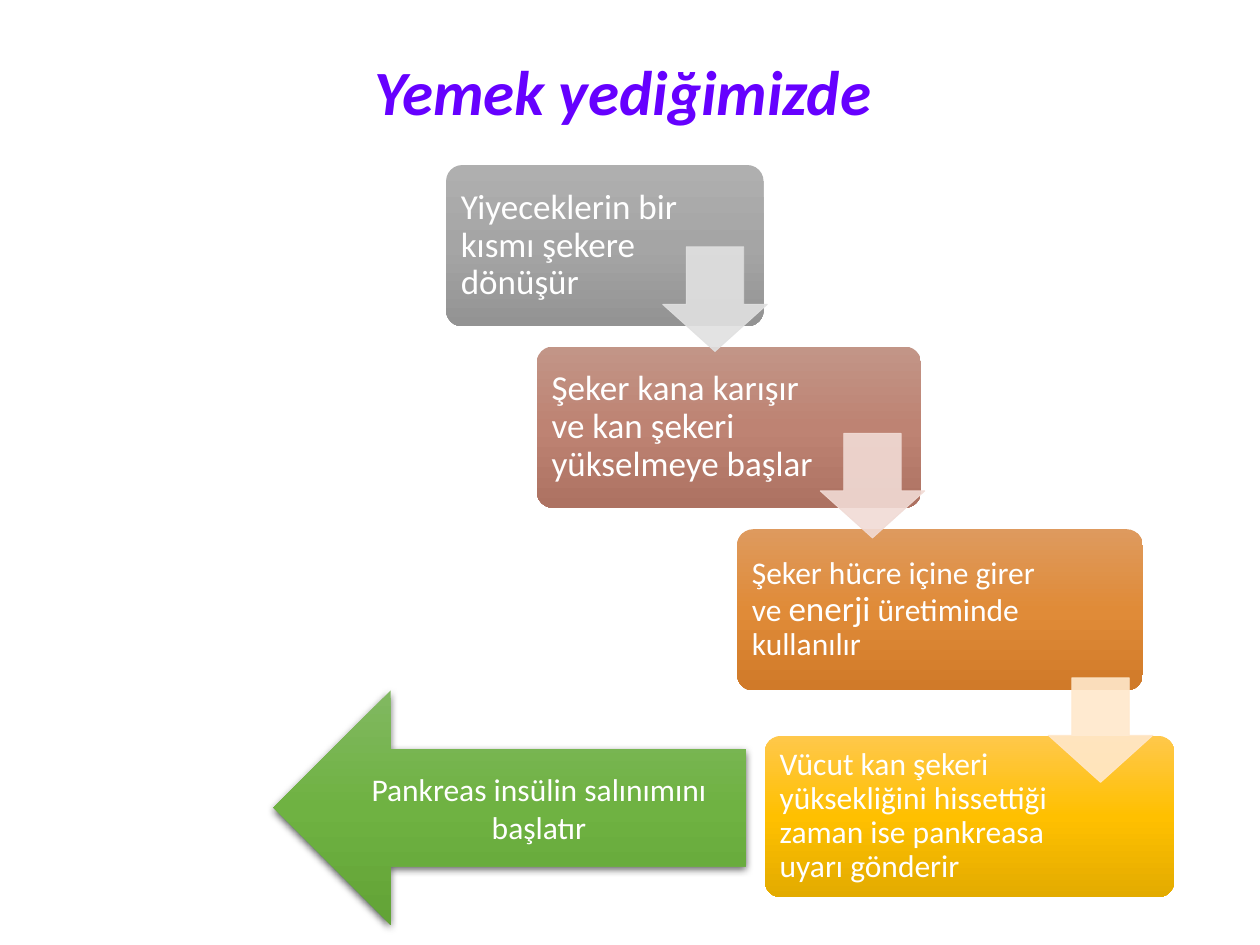
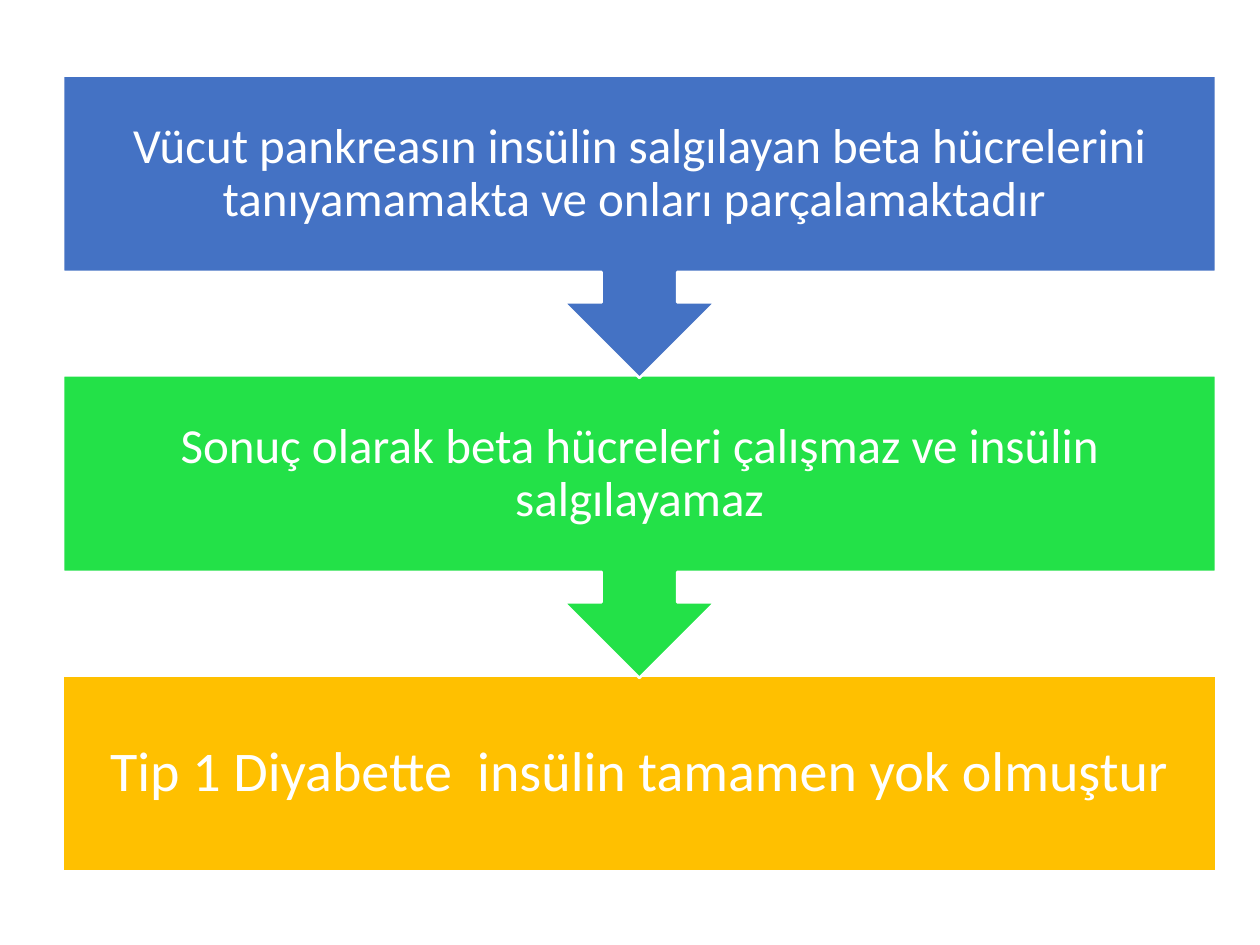
"""Build two slides on what happens to insulin after a meal and in Type 1 diabetes."""
from copy import deepcopy
from dataclasses import dataclass

from lxml.etree import SubElement
from pptx import Presentation
from pptx.dml.color import RGBColor
from pptx.enum.shapes import MSO_SHAPE
from pptx.enum.text import MSO_ANCHOR, PP_ALIGN
from pptx.oxml.ns import qn
from pptx.shapes.autoshape import Shape
from pptx.slide import Slide
from pptx.util import Inches, Pt

FONT = "Calibri"
WHITE = RGBColor(0xFF, 0xFF, 0xFF)
PURPLE = RGBColor(0x66, 0x00, 0xFF)
BLUE = RGBColor(0x44, 0x72, 0xC4)
GREEN = RGBColor(0x23, 0xE1, 0x48)
GOLD = RGBColor(0xFF, 0xC0, 0x00)
PALE_GREY = RGBColor(0xE1, 0xE1, 0xE1)
PALE_BROWN = RGBColor(0xF1, 0xDB, 0xD5)
PALE_ORANGE = RGBColor(0xFF, 0xE8, 0xCB)

Shades = tuple[RGBColor, RGBColor, RGBColor]
GREY_SHADES = (RGBColor(0xAF, 0xAF, 0xAF), RGBColor(0xA5, 0xA5, 0xA5), RGBColor(0x93, 0x93, 0x93))
BROWN_SHADES = (RGBColor(0xC2, 0x95, 0x87), RGBColor(0xBE, 0x83, 0x73), RGBColor(0xAD, 0x72, 0x62))
ORANGE_SHADES = (RGBColor(0xDE, 0x9A, 0x5E), RGBColor(0xE0, 0x8B, 0x38), RGBColor(0xD0, 0x7A, 0x29))
GOLD_SHADES = (RGBColor(0xFF, 0xC8, 0x4B), GOLD, RGBColor(0xE3, 0xAB, 0x00))
GREEN_SHADES = (RGBColor(0x81, 0xB8, 0x61), RGBColor(0x6F, 0xB2, 0x42), RGBColor(0x62, 0xA3, 0x36))

STEP_HEIGHT = 1.28
ARROW_SIZE = 0.83
STAGE_LEFT, STAGE_TOP, STAGE_WIDTH = 0.5, 0.6, 9.15
STAGE_PITCH, CALLOUT_HEIGHT, STAGE_HEIGHT = 2.38, 2.4, 1.56


@dataclass(frozen=True)
class Step:
    """A rounded box of the staircase; each span is a text with its size."""
    left: float
    top: float
    width: float
    right_margin: float
    shades: Shades
    spans: tuple[tuple[str, int], ...]


@dataclass(frozen=True)
class StepArrow:
    """A pale arrow leading from one step to the next."""
    left: float
    top: float
    color: RGBColor


@dataclass(frozen=True)
class Stage:
    """A full-width stage of the vertical process."""
    text: str
    size: int
    margin: float
    color: RGBColor


STEPS = (
    Step(3.54, 1.31, 2.52, 0.6, GREY_SHADES, (("Yiyeceklerin bir kısmı şekere dönüşür", 20),)),
    Step(4.26, 2.75, 3.05, 0.71, BROWN_SHADES,
         (("Şeker kana karışır ve kan şekeri yükselmeye başlar", 20),)),
    Step(5.85, 4.2, 3.22, 0.73, ORANGE_SHADES,
         (("Şeker hücre içine girer ve ", 18), ("enerji", 20), (" üretiminde kullanılır", 18))),
    Step(6.07, 5.84, 3.25, 0.74, GOLD_SHADES,
         (("Vücut kan şekeri yüksekliğini hissettiği zaman ise pankreasa uyarı gönderir", 18),)),
)
STEP_ARROWS = (
    StepArrow(5.26, 1.96, PALE_GREY),
    StepArrow(6.51, 3.44, PALE_BROWN),
    StepArrow(8.32, 5.38, PALE_ORANGE),
)
STAGES = (
    Stage("Vücut pankreasın insülin salgılayan beta hücrelerini tanıyamamakta ve onları parçalamaktadır ",
          28, 0.22, BLUE),
    Stage("Sonuç olarak beta hücreleri çalışmaz ve insülin salgılayamaz", 28, 0.22, GREEN),
    Stage("Tip 1 Diyabette  insülin tamamen yok olmuştur", 32, 0.25, GOLD),
)


def add_figure(page: Slide, kind: MSO_SHAPE, left: float, top: float, width: float, height: float) -> Shape:
    """Add a preset shape without shadow or outline."""
    figure = page.shapes.add_shape(kind, Inches(left), Inches(top), Inches(width), Inches(height))
    figure.shadow.inherit = False
    figure.line.fill.background()
    return figure


def fill_shades(figure: Shape, shades: Shades) -> None:
    """Fill a shape with a three-stop gradient from top to bottom."""
    figure.fill.gradient()
    figure.fill.gradient_angle = 270
    stop_list = figure.fill._fill._gradFill.find(qn("a:gsLst"))
    stop_list.append(deepcopy(stop_list[0]))
    for index, (stop, shade) in enumerate(zip(figure.fill.gradient_stops, shades)):
        stop.position = index / 2
        stop.color.rgb = shade


def write_text(figure: Shape, spans: tuple[tuple[str, int], ...], alignment: PP_ALIGN,
               line_spacing: float = 0.9) -> None:
    """Write white text of one or more sizes, centred vertically."""
    frame = figure.text_frame
    frame.word_wrap = True
    frame.vertical_anchor = MSO_ANCHOR.MIDDLE
    para = frame.paragraphs[0]
    para.alignment = alignment
    para.line_spacing = line_spacing
    para.font.name = FONT
    for text, size in spans:
        span = para.add_run()
        span.text = text
        span.font.name = FONT
        span.font.size = Pt(size)
        span.font.color.rgb = WHITE


def set_margins(figure: Shape, margin: float, right: float) -> None:
    """Set the text margins, with a separate one on the right."""
    frame = figure.text_frame
    frame.margin_left = frame.margin_top = frame.margin_bottom = Inches(margin)
    frame.margin_right = Inches(right)


def add_alpha(figure: Shape, percent: int) -> None:
    """Make the fill and outline of a shape partly transparent."""
    for color in figure._element.spPr.iter(qn("a:srgbClr")):
        SubElement(color, qn("a:alpha"), val=str(percent * 1000))


def add_soft_shadow(figure: Shape) -> None:
    """Give a shape a soft dark shadow below it."""
    effects = figure._element.spPr.find(qn("a:effectLst"))
    shadow = SubElement(effects, qn("a:outerShdw"), blurRad=str(Pt(4.5)), dist=str(Pt(1.5)),
                        dir="5400000", algn="ctr", rotWithShape="0")
    color = SubElement(shadow, qn("a:srgbClr"), val="000000")
    SubElement(color, qn("a:alpha"), val="63000")


def add_title(page: Slide, text: str) -> None:
    """Place and format the slide title."""
    title = page.shapes.title
    title.left, title.top, title.width, title.height = (Inches(value) for value in (2.87, 0.36, 4.57, 0.71))
    title.text_frame.text = text
    para = title.text_frame.paragraphs[0]
    para.alignment = PP_ALIGN.LEFT
    font = para.font
    font.name, font.size, font.bold, font.italic = FONT, Pt(36), True, True
    font.color.rgb = PURPLE


def draw_step(page: Slide, step: Step) -> None:
    """Draw one box of the staircase."""
    box = add_figure(page, MSO_SHAPE.ROUNDED_RECTANGLE, step.left, step.top, step.width, STEP_HEIGHT)
    box.adjustments[0] = 0.1
    fill_shades(box, step.shades)
    set_margins(box, 0.08, step.right_margin)
    write_text(box, step.spans, PP_ALIGN.LEFT)


def draw_step_arrow(page: Slide, arrow: StepArrow) -> None:
    """Draw one translucent arrow between steps."""
    figure = add_figure(page, MSO_SHAPE.DOWN_ARROW, arrow.left, arrow.top, ARROW_SIZE, ARROW_SIZE)
    figure.adjustments[0], figure.adjustments[1] = 0.55, 0.45
    figure.fill.solid()
    figure.fill.fore_color.rgb = arrow.color
    figure.line.color.rgb = arrow.color
    figure.line.width = Pt(0.5)
    add_alpha(figure, 90)


def draw_stage(page: Slide, index: int, stage: Stage) -> None:
    """Draw one stage; all but the last point down to the next."""
    is_last = index == len(STAGES) - 1
    kind = MSO_SHAPE.RECTANGLE if is_last else MSO_SHAPE.DOWN_ARROW_CALLOUT
    height = STAGE_HEIGHT if is_last else CALLOUT_HEIGHT
    box = add_figure(page, kind, STAGE_LEFT, STAGE_TOP + index * STAGE_PITCH, STAGE_WIDTH, height)
    box.fill.solid()
    box.fill.fore_color.rgb = stage.color
    box.line.color.rgb = WHITE
    box.line.width = Pt(1.5)
    set_margins(box, stage.margin, stage.margin)
    write_text(box, ((stage.text, stage.size),), PP_ALIGN.CENTER)


def build_meal_page(page: Slide) -> None:
    """Build the staircase from eating to insulin release."""
    add_title(page, "Yemek yediğimizde")
    for step in STEPS:
        draw_step(page, step)
    for arrow in STEP_ARROWS:
        draw_step_arrow(page, arrow)
    insulin = add_figure(page, MSO_SHAPE.LEFT_ARROW, 2.17, 5.48, 3.75, 1.86)
    fill_shades(insulin, GREEN_SHADES)
    add_soft_shadow(insulin)
    write_text(insulin, (("Pankreas insülin salınımını başlatır", 18),), PP_ALIGN.CENTER, 1.0)


def build_diabetes_page(page: Slide) -> None:
    """Build the process that ends without insulin, bottom stage first."""
    for index, stage in reversed(list(enumerate(STAGES))):
        draw_stage(page, index, stage)


def main() -> None:
    """Build and save the deck."""
    deck = Presentation()
    deck.slide_width, deck.slide_height = Inches(10), Inches(7.5)
    title_only, blank = deck.slide_layouts[5], deck.slide_layouts[6]
    build_meal_page(deck.slides.add_slide(title_only))
    build_diabetes_page(deck.slides.add_slide(blank))
    deck.save("out.pptx")


if __name__ == "__main__":
    main()
